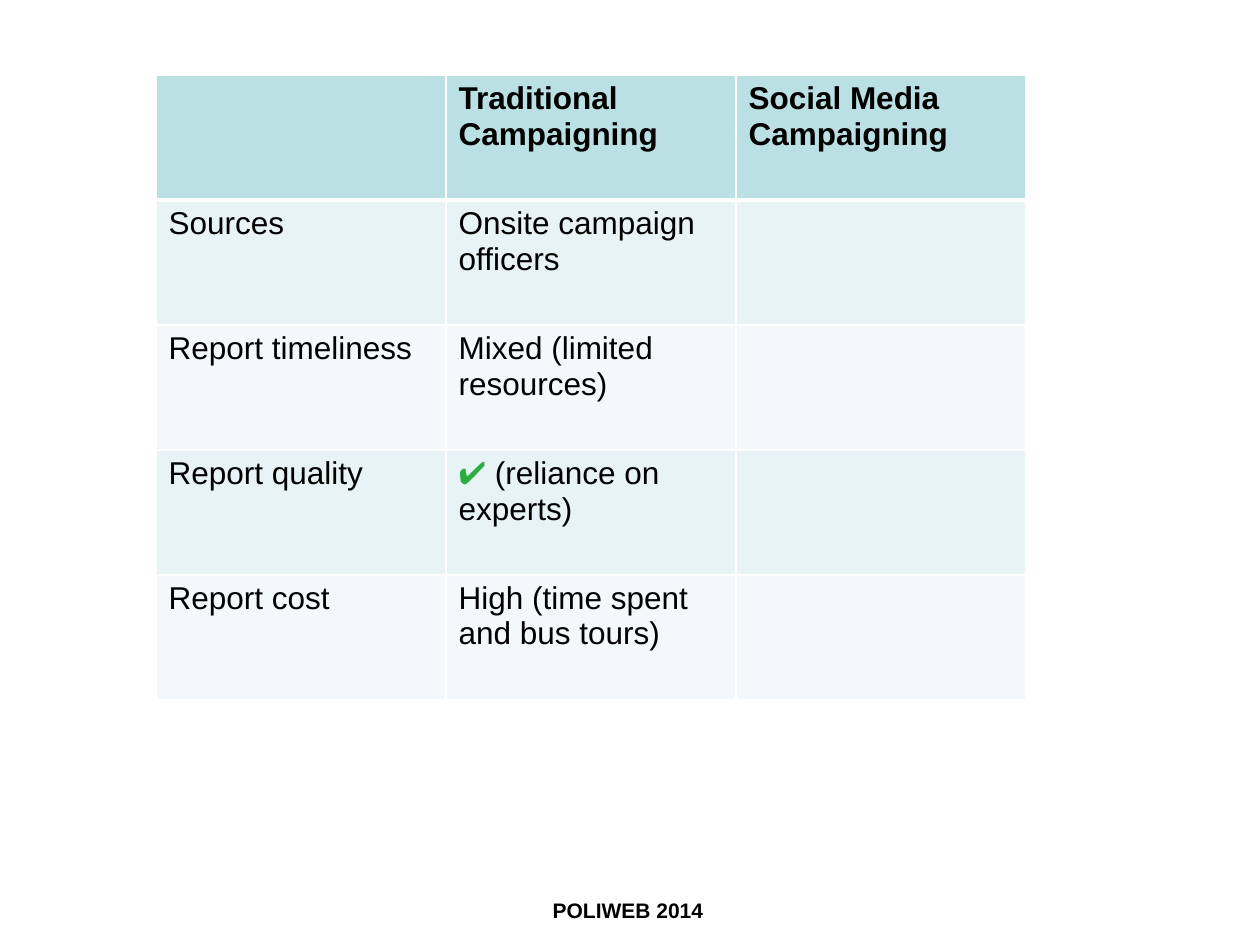
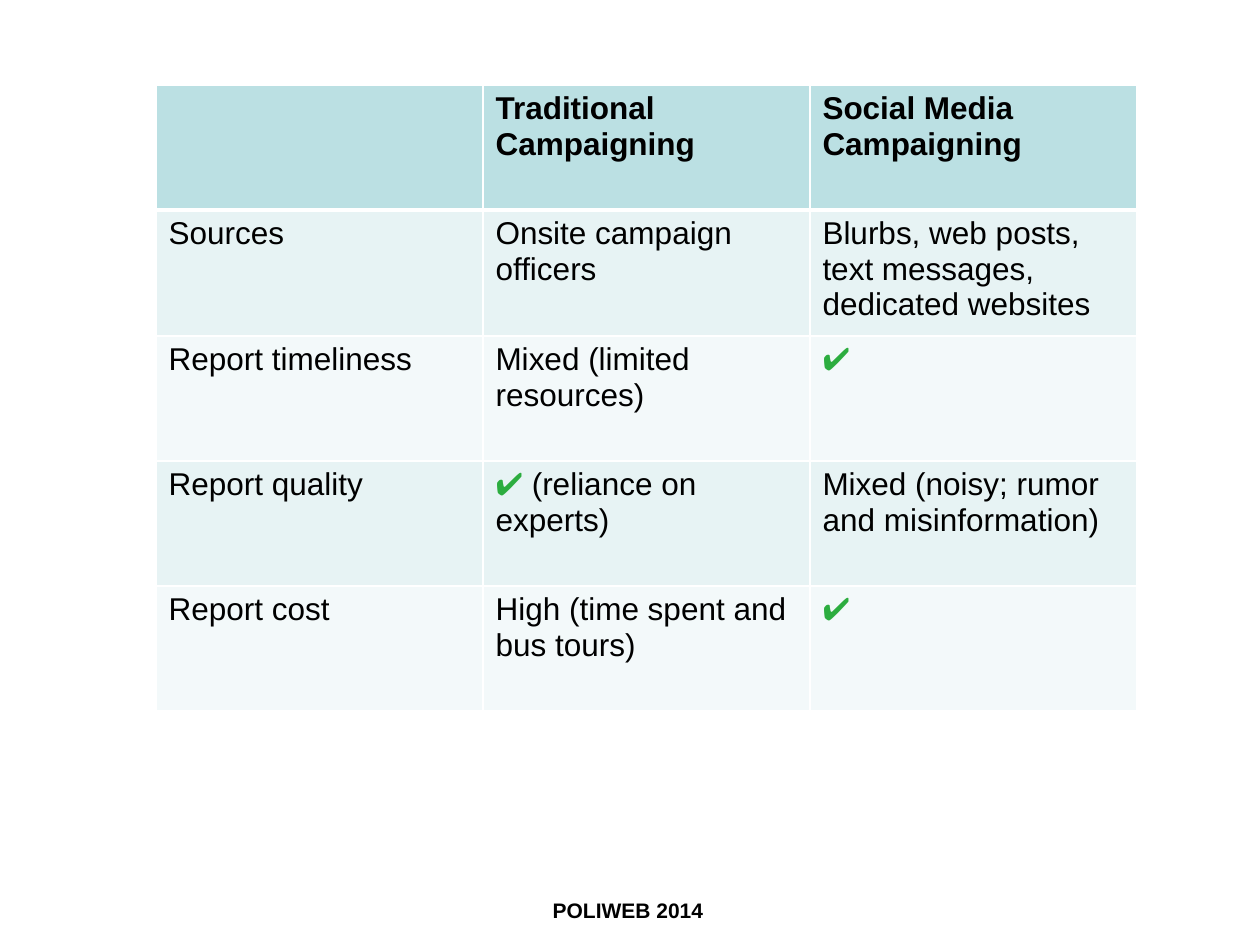
from lxml import etree
from pptx import Presentation
from pptx import util as u
from pptx.dml.color import RGBColor
from pptx.enum import text
from pptx.oxml.ns import qn

# Shared style
BLACK = RGBColor(0x00, 0x00, 0x00)
WHITE = RGBColor(0xFF, 0xFF, 0xFF)
GREEN = RGBColor(0x2C, 0xAD, 0x3F)
HEAD = RGBColor(0xBB, 0xE0, 0xE3)
BANDS = (RGBColor(0xF3, 0xF9, 0xFA), RGBColor(0xE7, 0xF3, 0xF4))
FONT = "Arial"
CHECK = "✔"

# Table wording: one row per topic
TITLES = ("", "Traditional\nCampaigning", "Social Media\nCampaigning")
TOPICS = (
    ("Sources", "Onsite campaign officers"),
    ("Report timeliness", "Mixed (limited resources)"),
    ("Report quality", "✔ (reliance on experts)"),
    ("Report cost", "High (time spent and bus tours)"),
)
SOCIAL = (
    "Blurbs, web posts, text messages, dedicated websites",
    CHECK,
    "Mixed (noisy; rumor and misinformation)",
    CHECK,
)


def px(n):
    return u.Emu(round(n * 914400 / 126))


class Deck:
    def __init__(self):
        self.prs = Presentation()
        self.prs.slide_width = px(1260)
        self.prs.slide_height = px(945)
        self.slide = None

    def page(self):
        self.slide = self.prs.slides.add_slide(self.prs.slide_layouts[6])
        fill = self.slide.background.fill
        fill.solid()
        fill.fore_color.rgb = WHITE
        self.footer("POLIWEB 2014")

    def run(self, para, words, size, bold=False, color=BLACK):
        run = para.add_run()
        run.text = words
        font = run.font
        font.name, font.size, font.bold = FONT, u.Pt(size), bold
        font.color.rgb = color

    def footer(self, words):
        box = self.slide.shapes.add_textbox(px(229), px(891), px(798), px(89))
        box.text_frame.word_wrap = True
        para = box.text_frame.paragraphs[0]
        para.alignment = text.PP_ALIGN.CENTER
        self.run(para, words, 12, bold=True)

    def border(self, cell, side, width):
        props = cell._tc.get_or_add_tcPr()
        line = etree.SubElement(props, qn("a:ln" + side), w=str(u.Pt(width)))
        solid = etree.SubElement(line, qn("a:solidFill"))
        etree.SubElement(solid, qn("a:srgbClr"), val=str(WHITE))

    def cell(self, cell, words, row):
        # Borders come first, then the fill; a thick rule sits under the header
        for side in "LRTB":
            thick = (row, side) in ((0, "B"), (1, "T"))
            self.border(cell, side, 3 if thick else 1)
        cell.fill.solid()
        cell.fill.fore_color.rgb = BANDS[row % 2] if row else HEAD

        # Check marks are green, all other words black
        frame = cell.text_frame
        for i, line in enumerate(words.split("\n") if words else ()):
            para = frame.add_paragraph() if i else frame.paragraphs[0]
            if line.startswith(CHECK):
                cut = len(CHECK) + line.startswith(CHECK + " ")
                self.run(para, line[:cut], 18, color=GREEN)
                line = line[cut:]
            if line:
                self.run(para, line, 18, bold=row == 0)

    def table(self, top, wide, rows, left=156, high=125):
        cols = len(rows[0])
        grid = self.slide.shapes.add_table(
            len(rows), cols, px(left), px(top),
            px(wide * cols), px(high * len(rows))).table
        grid.first_row = grid.horz_banding = False
        for col in grid.columns:
            col.width = px(wide)
        for r, row in enumerate(rows):
            grid.rows[r].height = px(high)
            for c, words in enumerate(row):
                self.cell(grid.cell(r, c), words, r)


def main():
    deck = Deck()

    # Slide 1: social media column still open
    deck.page()
    deck.table(75, 290, [TITLES] + [topic + ("",) for topic in TOPICS])

    # Slide 2: both columns filled
    deck.page()
    deck.table(85, 327, [TITLES] + [t + (s,) for t, s in zip(TOPICS, SOCIAL)])

    deck.prs.save("out.pptx")


if __name__ == "__main__":
    main()
